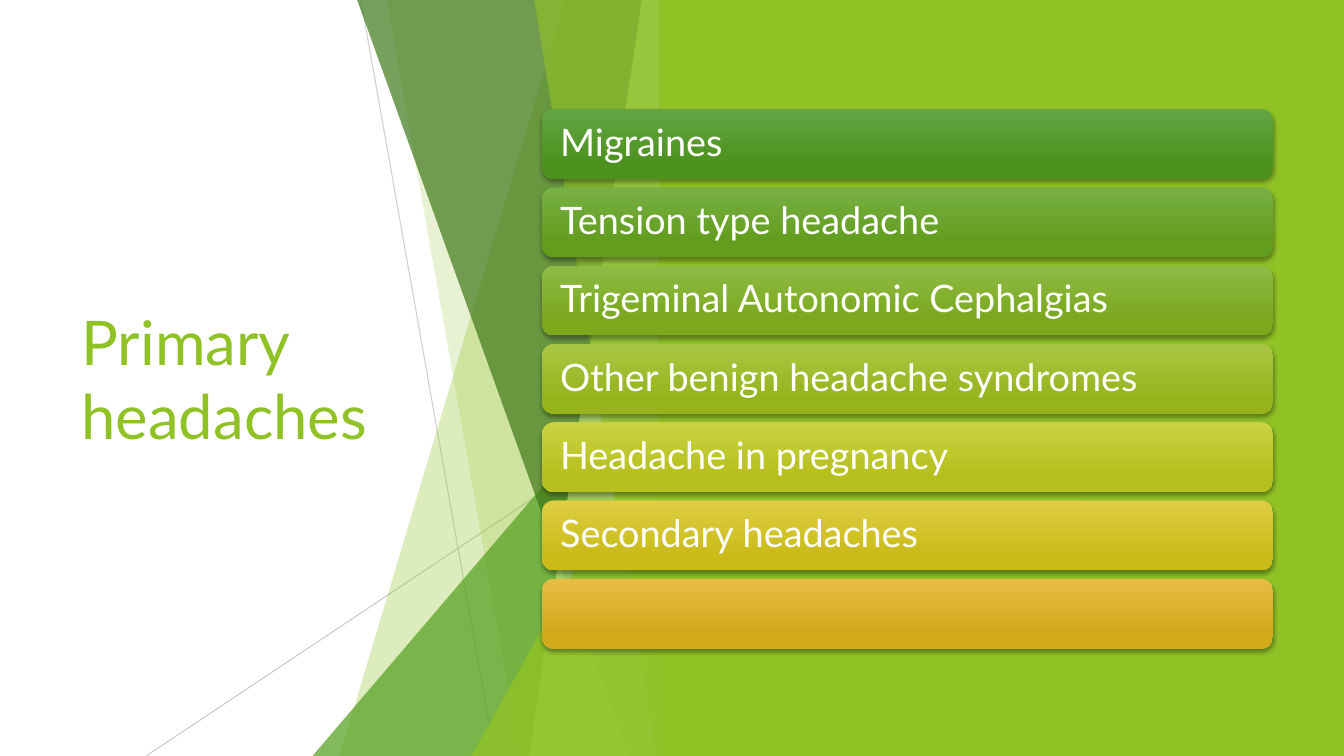
from lxml import etree
from pptx import Presentation
from pptx.dml.color import RGBColor
from pptx.enum import shapes, text
from pptx.oxml import ns
from pptx.util import Pt

WHITE = RGBColor(0xFF, 0xFF, 0xFF)
BLACK = RGBColor(0, 0, 0)
GREY = RGBColor(0xBF, 0xBF, 0xBF)
LIME = RGBColor(0x90, 0xC2, 0x26)
PALE_LIME = RGBColor(0xC0, 0xE4, 0x74)
GREEN = RGBColor(0x54, 0xA0, 0x21)
DARK_GREEN = RGBColor(0x3F, 0x78, 0x19)

SLIDE_WIDTH, SLIDE_HEIGHT = 960, 540
FACET_TOP, FACET_RIGHT = -0.6, 479.6
BAR_LEFT, BAR_TOP, BAR_WIDTH, BAR_HEIGHT, BAR_PITCH = 387.2, 77.9, 522, 49.8, 55.92

# Label, upper colour, lower colour
BARS = [
    ("Migraines", "63A545", "4D921E"),
    ("Tension type headache", "77B044", "629D1E"),
    ("Trigeminal Autonomic Cephalgias", "8EBB44", "7BA81D"),
    ("Other benign headache syndromes", "AAC744", "97B31C"),
    ("Headache in pregnancy", "CAD243", "B6BF1B"),
    ("Secondary headaches", "DFCE43", "CABB19"),
    ("", "E7BC43", "D2A91B"),
]


def add_element(parent, tag, **attributes):
    values = {name: str(value) for name, value in attributes.items()}
    return etree.SubElement(parent, ns.qn(tag), values)


def set_opacity(properties, percent):
    """Make the first solid colour below the given XML element translucent."""
    color = next(properties.iter(ns.qn("a:srgbClr")))
    add_element(color, "a:alpha", val=percent * 1000)


class SlideBuilder:
    def __init__(self, slide, font_name):
        self.slide = slide
        self.shapes = slide.shapes
        self.font_name = font_name

    def style_text(self, paragraph, size, color):
        paragraph.alignment = text.PP_ALIGN.LEFT
        paragraph.font.name = self.font_name
        paragraph.font.size = Pt(size)
        paragraph.font.color.rgb = color

    def title(self, wording, left, top, width, height):
        title = self.shapes.title
        title.left, title.top = Pt(left), Pt(top)
        title.width, title.height = Pt(width), Pt(height)
        frame = title.text_frame
        frame.text = wording
        frame.word_wrap = True
        frame.auto_size = text.MSO_AUTO_SIZE.NONE
        frame.vertical_anchor = text.MSO_ANCHOR.MIDDLE
        self.style_text(frame.paragraphs[0], 44, LIME)

    def line(self, x1, y1, x2, y2, opacity):
        line = self.shapes.add_connector(
            shapes.MSO_CONNECTOR.STRAIGHT, Pt(x1), Pt(y1), Pt(x2), Pt(y2))
        line.line.color.rgb = GREY
        line.line.width = Pt(0.75)
        properties = line._element.spPr
        set_opacity(properties, opacity)
        add_element(properties, "a:effectLst")

    def paint(self, shape, color, opacity=100):
        shape.fill.solid()
        shape.fill.fore_color.rgb = color
        if opacity < 100:
            set_opacity(shape._element.spPr, opacity)
        shape.line.fill.background()
        shape.shadow.inherit = False

    def facet(self, top_x, bottom_x, color, opacity):
        """Draw a full-height panel with a slanted left edge."""
        builder = self.shapes.build_freeform(Pt(top_x), Pt(FACET_TOP))
        corners = [(FACET_RIGHT, FACET_TOP), (FACET_RIGHT, SLIDE_HEIGHT), (bottom_x, SLIDE_HEIGHT)]
        builder.add_line_segments([(Pt(x), Pt(y)) for x, y in corners])
        self.paint(builder.convert_to_shape(), color, opacity)

    def corner_triangle(self, left, top, color, opacity):
        triangle = self.shapes.add_shape(
            shapes.MSO_SHAPE.ISOSCELES_TRIANGLE, Pt(left), Pt(top),
            Pt(FACET_RIGHT - left), Pt(SLIDE_HEIGHT - top))
        triangle.adjustments[0] = 1
        self.paint(triangle, color, opacity)

    def panel(self, left, color):
        panel = self.shapes.add_shape(
            shapes.MSO_SHAPE.RECTANGLE, Pt(left), 0, Pt(SLIDE_WIDTH - left), Pt(SLIDE_HEIGHT))
        self.paint(panel, color)

    def bar(self, top, label, upper, lower):
        bar = self.shapes.add_shape(
            shapes.MSO_SHAPE.ROUNDED_RECTANGLE,
            Pt(BAR_LEFT), Pt(top), Pt(BAR_WIDTH), Pt(BAR_HEIGHT))
        bar.fill.gradient()
        bar.fill.gradient_angle = 270
        for stop, color, position in zip(bar.fill.gradient_stops, (upper, lower), (0, 0.78)):
            stop.color.rgb = RGBColor.from_string(color)
            stop.position = position
        bar.line.fill.background()
        self.drop_shadow(bar)
        if label:
            frame = bar.text_frame
            frame.text = label
            frame.word_wrap = True
            frame.vertical_anchor = text.MSO_ANCHOR.MIDDLE
            frame.margin_left = frame.margin_right = Pt(10.5)
            frame.paragraphs[0].line_spacing = 0.9
            self.style_text(frame.paragraphs[0], 27, WHITE)

    def drop_shadow(self, shape):
        shape.shadow.inherit = False
        effects = shape._element.spPr.find(ns.qn("a:effectLst"))
        shadow = add_element(effects, "a:outerShdw", blurRad=Pt(3), dist=Pt(2),
                             dir=90 * 60000, rotWithShape=0)
        color = add_element(shadow, "a:srgbClr", val=BLACK)
        add_element(color, "a:alpha", val=35000)


def main():
    presentation = Presentation()
    presentation.slide_width = Pt(SLIDE_WIDTH)
    presentation.slide_height = Pt(SLIDE_HEIGHT)
    slide = presentation.slides.add_slide(presentation.slide_layouts[5])
    builder = SlideBuilder(slide, "Lato")

    builder.title("Primary headaches", 51, 108.7, 279.4, 322.6)
    builder.line(257.8, 0, 353.5, 540, 75)
    builder.line(479.5, 290.2, 104.4, 540, 80)
    builder.facet(404, 242.6, LIME, 30)
    builder.facet(276.2, 371.5, LIME, 20)
    builder.corner_triangle(223.2, 239.8, GREEN, 72)
    builder.facet(254.9, 449.3, DARK_GREEN, 70)
    builder.facet(458.6, 378, PALE_LIME, 70)
    builder.facet(381.6, 468.7, LIME, 65)
    builder.corner_triangle(336.8, 283, LIME, 80)
    builder.panel(470.6, LIME)
    for index, (label, upper, lower) in enumerate(BARS):
        builder.bar(BAR_TOP + index * BAR_PITCH, label, upper, lower)

    presentation.save("out.pptx")


if __name__ == "__main__":
    main()
